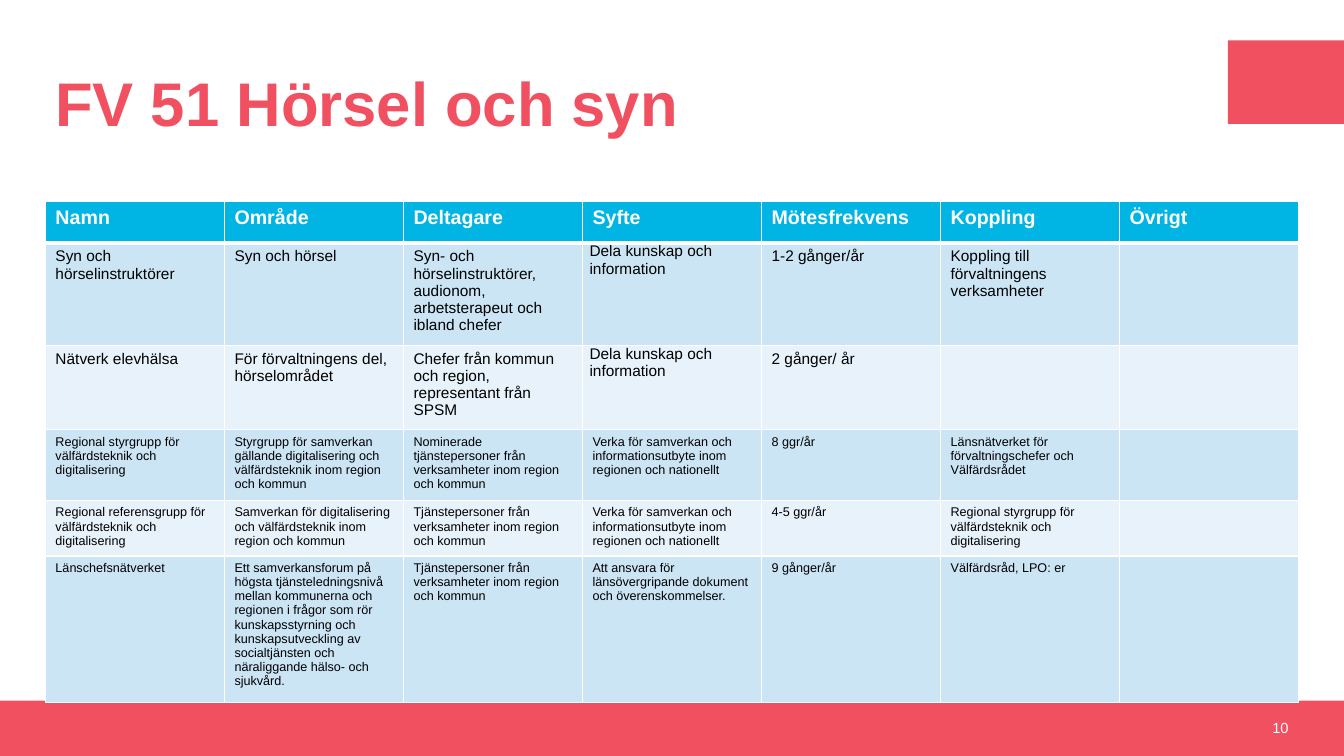
from dataclasses import dataclass

from lxml.etree import SubElement
from pptx import Presentation
from pptx.dml.color import RGBColor
from pptx.enum.shapes import MSO_SHAPE
from pptx.enum.text import MSO_ANCHOR, PP_ALIGN
from pptx.oxml.ns import qn
from pptx.slide import Slide
from pptx.table import _Cell
from pptx.text.text import _Paragraph
from pptx.util import Inches, Pt

WIDTH, HEIGHT = Inches(13.33), Inches(7.5)
FONT = "Arial"
COLORS = {
    "coral": "F15060",
    "white": "FFFFFF",
    "black": "000000",
    "header": "00B4E4",
    "odd": "CCE5F5",
    "even": "E7F2FA",
}


@dataclass(frozen=True)
class Area:
    """Left, top, width and height in percent of the slide."""

    left: float
    top: float
    width: float
    height: float

    def box(self) -> tuple[int, int, int, int]:
        return (
            int(WIDTH * self.left / 100),
            int(HEIGHT * self.top / 100),
            int(WIDTH * self.width / 100),
            int(HEIGHT * self.height / 100),
        )


@dataclass(frozen=True)
class Style:
    size: float
    color: str
    bold: bool = False


@dataclass(frozen=True)
class Label:
    text: str
    area: Area
    style: Style
    align: PP_ALIGN = PP_ALIGN.LEFT
    line_spacing: float = 1.0


@dataclass(frozen=True)
class Network:
    cells: tuple[str, ...]
    size: float
    tight_purpose: bool = False


BANDS = [Area(0, 92.67, 100, 7.33), Area(91.37, 5.33, 8.63, 11.07)]
LABELS = [
    Label("FV 51 Hörsel och syn", Area(3.38, 5.33, 87.1, 17.6),
          Style(44, "coral", True), line_spacing=0.9),
    Label("10", Area(74.12, 92.67, 22.5, 7.2), Style(10.5, "white"), PP_ALIGN.RIGHT),
]
ROW_HEIGHT = 5.47
HEADINGS = ("Namn", "Område", "Deltagare", "Syfte", "Mötesfrekvens", "Koppling", "Övrigt")
PURPOSE = HEADINGS.index("Syfte")
SHARE = "Dela kunskap och information"
COOPERATE = "Verka för samverkan och informationsutbyte inom regionen och nationellt"
OFFICERS = "Tjänstepersoner från verksamheter inom region och kommun"
STEERING = "Regional styrgrupp för välfärdsteknik och digitalisering"
NETWORKS = [
    Network(("Syn och hörselinstruktörer", "Syn och hörsel",
             "Syn- och hörselinstruktörer, audionom, arbetsterapeut och ibland chefer",
             SHARE, "1-2 gånger/år", "Koppling till förvaltningens verksamheter", ""),
            11, True),
    Network(("Nätverk elevhälsa", "För förvaltningens del, hörselområdet",
             "Chefer från kommun och region, representant från SPSM",
             SHARE, "2 gånger/ år", "", ""), 11, True),
    Network((STEERING,
             "Styrgrupp för samverkan gällande digitalisering och välfärdsteknik "
             "inom region och kommun",
             "Nominerade tjänstepersoner från verksamheter inom region och kommun",
             COOPERATE, "8 ggr/år",
             "Länsnätverket för förvaltningschefer och Välfärdsrådet", ""), 9),
    Network(("Regional referensgrupp för välfärdsteknik och digitalisering",
             "Samverkan för digitalisering och välfärdsteknik inom region och kommun",
             OFFICERS, COOPERATE, "4-5 ggr/år", STEERING, ""), 9),
    Network(("Länschefsnätverket",
             "Ett samverkansforum på högsta tjänsteledningsnivå mellan kommunerna och "
             "regionen i frågor som rör kunskapsstyrning och kunskapsutveckling av "
             "socialtjänsten och näraliggande hälso- och sjukvård.",
             OFFICERS, "Att ansvara för länsövergripande dokument och överenskommelser.",
             "9 gånger/år", "Välfärdsråd, LPO: er", ""), 9),
]
TABLE_AREA = Area(3.38, 26.67, 93.25, ROW_HEIGHT * (len(NETWORKS) + 1))


def rgb(name: str) -> RGBColor:
    return RGBColor.from_string(COLORS[name])


def set_font(paragraph: _Paragraph, style: Style) -> None:
    font = paragraph.font
    font.name, font.size, font.bold = FONT, Pt(style.size), style.bold
    font.color.rgb = rgb(style.color)


def add_band(slide: Slide, area: Area) -> None:
    band = slide.shapes.add_shape(MSO_SHAPE.RECTANGLE, *area.box())
    band.shadow.inherit = False
    band.fill.solid()
    band.fill.fore_color.rgb = rgb("coral")
    band.line.fill.background()


def add_label(slide: Slide, label: Label) -> None:
    frame = slide.shapes.add_textbox(*label.area.box()).text_frame
    frame.word_wrap = True
    frame.vertical_anchor = MSO_ANCHOR.MIDDLE
    paragraph = frame.paragraphs[0]
    paragraph.text = label.text
    paragraph.alignment = label.align
    paragraph.line_spacing = label.line_spacing
    set_font(paragraph, label.style)


def add_borders(cell: _Cell, top: float, bottom: float) -> None:
    properties = cell._tc.get_or_add_tcPr()
    for side, points in (("L", 1), ("R", 1), ("T", top), ("B", bottom)):
        border = SubElement(properties, qn(f"a:ln{side}"), w=str(Pt(points)))
        fill = SubElement(border, qn("a:solidFill"))
        SubElement(fill, qn("a:srgbClr"), val=COLORS["white"])


def fill_cell(cell: _Cell, text: str, style: Style, background: str,
              top: float = 1, bottom: float = 1) -> None:
    add_borders(cell, top, bottom)
    cell.fill.solid()
    cell.fill.fore_color.rgb = rgb(background)
    paragraph = cell.text_frame.paragraphs[0]
    if text:
        paragraph.text = text
    set_font(paragraph, style)


def tighten(cell: _Cell) -> None:
    cell.margin_left = cell.margin_right = Inches(0.07)
    cell.margin_top = cell.margin_bottom = 0
    cell.text_frame.paragraphs[0].space_after = Pt(6)


def add_networks(slide: Slide) -> None:
    table = slide.shapes.add_table(
        len(NETWORKS) + 1, len(HEADINGS), *TABLE_AREA.box()
    ).table
    for column, heading in enumerate(HEADINGS):
        fill_cell(table.cell(0, column), heading, Style(14, "white", True),
                  "header", bottom=3)
    for row, network in enumerate(NETWORKS, start=1):
        background = "odd" if row % 2 else "even"
        for column, text in enumerate(network.cells):
            fill_cell(table.cell(row, column), text, Style(network.size, "black"),
                      background, top=3 if row == 1 else 1)
        if network.tight_purpose:
            tighten(table.cell(row, PURPOSE))


def main() -> None:
    presentation = Presentation()
    presentation.slide_width, presentation.slide_height = WIDTH, HEIGHT
    slide = presentation.slides.add_slide(presentation.slide_layouts[6])
    for area in BANDS:
        add_band(slide, area)
    for label in LABELS:
        add_label(slide, label)
    add_networks(slide)
    presentation.save("out.pptx")


if __name__ == "__main__":
    main()
